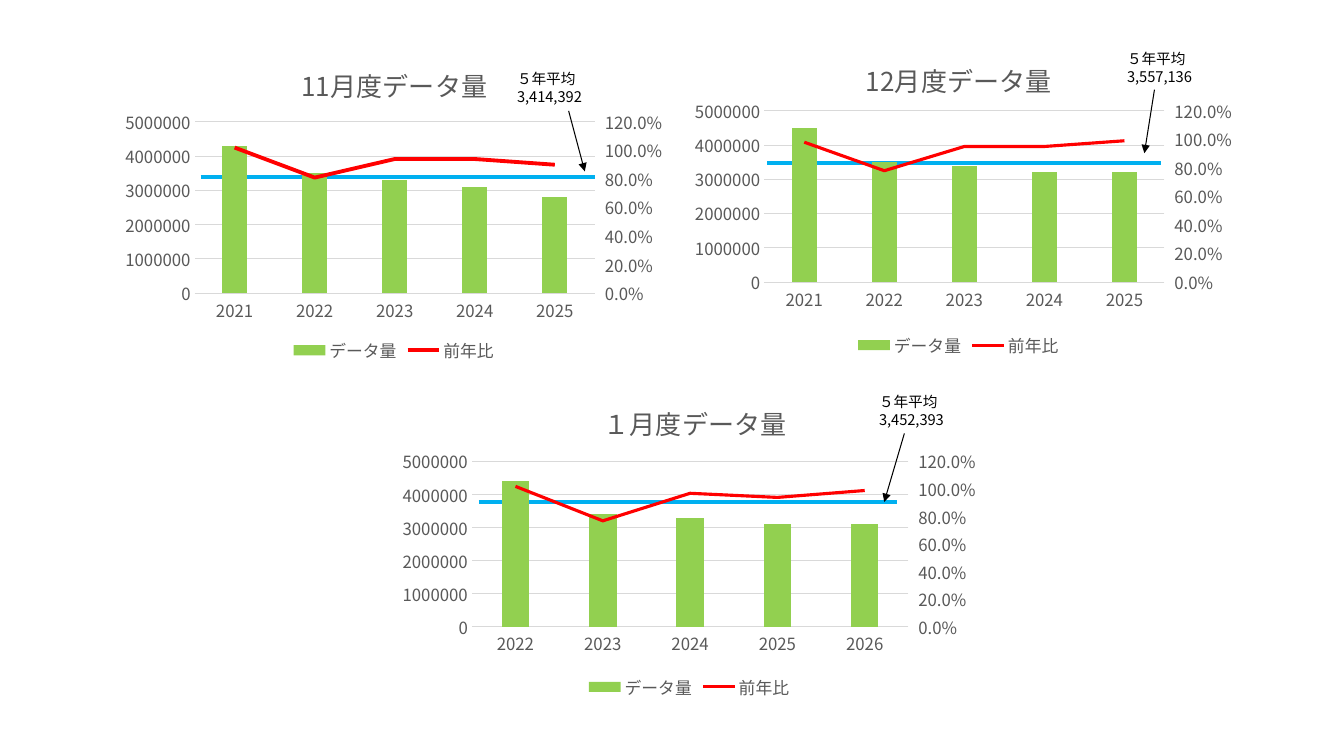
from copy import deepcopy

from pptx import Presentation
from pptx.chart.axis import ValueAxis
from pptx.chart.data import CategoryChartData
from pptx.dml.color import RGBColor
from pptx.enum.chart import (
    XL_CHART_TYPE as ChartType,
    XL_LEGEND_POSITION as LegendPosition,
    XL_MARKER_STYLE as MarkerStyle,
    XL_TICK_MARK as TickMark,
)
from pptx.enum.shapes import MSO_CONNECTOR as ConnectorType
from pptx.enum.text import MSO_AUTO_SIZE as AutoSize
from pptx.oxml import parse_xml
from pptx.oxml.ns import nsdecls, qn
from pptx.util import Emu, Pt

COLOURS = {
    "text": "000000",
    "chart text": "595959",
    "grid": "D9D9D9",
    "volume": "92D050",
    "ratio": "FF0000",
    "average": "00B0F0",
}
FONT = "Noto Sans CJK JP"
EMU_PER_PX = 9144


def px(*lengths):
    return [Emu(length * EMU_PER_PX) for length in lengths]


def colour(name):
    return RGBColor.from_string(COLOURS[name])


def style_font(font, size, colour_name):
    font.size = Pt(size)
    font.bold = False
    font.name = FONT
    font.color.rgb = colour(colour_name)


def add_east_asian_font(root):
    """Give the Japanese characters the same font as the Latin ones."""
    for latin in list(root.iter(qn("a:latin"))):
        latin.addnext(parse_xml(f'<a:ea {nsdecls("a")} typeface="{FONT}"/>'))


def set_layout(parent, index, target, **fractions):
    """Fix the place of a chart part as fractions of the chart area."""
    for old in parent.findall(qn("c:layout")):
        parent.remove(old)
    edges = '<c:xMode val="edge"/><c:yMode val="edge"/>'
    values = "".join(f'<c:{key} val="{value:.4f}"/>' for key, value in fractions.items())
    parent.insert(index, parse_xml(
        f'<c:layout {nsdecls("c")}><c:manualLayout>{target}{edges}{values}'
        "</c:manualLayout></c:layout>"))


class DataSlide:
    def __init__(self, deck):
        self.page = deck.slides.add_slide(deck.slide_layouts[6])

    def line(self, start, end, colour_name, width, arrow=False):
        line = self.page.shapes.add_connector(
            ConnectorType.STRAIGHT, *px(*start), *px(*end))
        line.line.color.rgb = colour(colour_name)
        line.line.width = Pt(width)
        properties = line.element.spPr
        if arrow:
            properties.find(qn("a:ln")).append(
                parse_xml(f'<a:tailEnd {nsdecls("a")} type="triangle"/>'))
        properties.append(parse_xml(f'<a:effectLst {nsdecls("a")}/>'))

    def average_label(self, place, value):
        box = self.page.shapes.add_textbox(*px(*place))
        frame = box.text_frame
        frame.word_wrap = True
        frame.auto_size = AutoSize.SHAPE_TO_FIT_TEXT
        frame.text = f"５年平均\n{value}"
        for para in frame.paragraphs:
            para.line_spacing = Pt(13)
            for span in para.runs:
                style_font(span.font, 10.5, "text")
        add_east_asian_font(box.element)

    def chart(self, place, title, title_at, plot_area, years, volumes, ratios, ratio_width):
        data = CategoryChartData()
        data.categories = years
        data.add_series("データ量", volumes)
        data.add_series("前年比", ratios, number_format="0.0%")
        chart = self.page.shapes.add_chart(
            ChartType.COLUMN_CLUSTERED, *px(*place), data).chart
        style_font(chart.font, 10, "text")
        self.style_axes(chart)
        self.move_ratio_to_right_axis(chart)

        bars, lines = chart.plots
        bars.gap_width = 219
        bars.vary_by_categories = False
        volume = bars.series[0]
        volume.invert_if_negative = False
        volume.format.fill.solid()
        volume.format.fill.fore_color.rgb = colour("volume")
        ratio = lines.series[0]
        ratio.format.line.color.rgb = colour("ratio")
        ratio.format.line.width = Pt(ratio_width)
        ratio.marker.style = MarkerStyle.NONE
        ratio.smooth = False

        chart.has_legend = True
        chart.legend.position = LegendPosition.BOTTOM
        chart.legend.include_in_layout = False
        style_font(chart.legend.font, 12, "chart text")
        chart.has_title = True
        chart.chart_title.text_frame.text = title
        style_font(chart.chart_title.text_frame.paragraphs[0].runs[0].font, 18.6, "chart text")

        width, height = place[2:]
        root = chart.element
        set_layout(root.find(f".//{qn('c:title')}"), 1, "",
                   x=title_at[0] / width, y=title_at[1] / height)
        plot = root.find(f".//{qn('c:plotArea')}")
        left, top, plot_width, plot_height = plot_area
        set_layout(plot, 0, '<c:layoutTarget val="inner"/>',
                   x=left / width, y=top / height,
                   w=plot_width / width, h=plot_height / height)
        clear = parse_xml(f'<c:spPr {nsdecls("c", "a")}><a:noFill/>'
                          "<a:ln><a:noFill/></a:ln></c:spPr>")
        plot.append(clear)
        root.find(qn("c:chart")).addnext(deepcopy(clear))
        add_east_asian_font(root)

    def style_axes(self, chart):
        years, volume = chart.category_axis, chart.value_axis
        for axis in (years, volume):
            axis.major_tick_mark = axis.minor_tick_mark = TickMark.NONE
            style_font(axis.tick_labels.font, 12, "chart text")
        volume.minimum_scale, volume.maximum_scale = 0, 5000000
        volume.major_unit = 1000000
        volume.tick_labels.number_format = "0"
        volume.tick_labels.number_format_is_linked = False
        volume.format.line.fill.background()
        volume.has_major_gridlines = True
        for line in (years.format.line, volume.major_gridlines.format.line):
            line.color.rgb = colour("grid")
            line.width = Pt(0.75)

    def move_ratio_to_right_axis(self, chart):
        """Turn the second series into a line with its own pair of axes."""
        plot = chart.element.find(f".//{qn('c:plotArea')}")
        bars = plot.find(qn("c:barChart"))
        ratio = bars.findall(qn("c:ser"))[1]
        for bar_setting in ratio.findall(qn("c:invertIfNegative")):
            ratio.remove(bar_setting)
        lines = parse_xml(
            f'<c:lineChart {nsdecls("c")}><c:grouping val="standard"/>'
            '<c:varyColors val="0"/><c:marker val="1"/>'
            '<c:axId val="5001"/><c:axId val="5002"/></c:lineChart>')
        lines.insert(2, ratio)
        bars.addnext(lines)

        hidden_years = deepcopy(plot.find(qn("c:catAx")))
        percent = deepcopy(plot.find(qn("c:valAx")))
        for axis, own, other in ((hidden_years, "5001", "5002"), (percent, "5002", "5001")):
            axis.find(qn("c:axId")).set("val", own)
            axis.find(qn("c:crossAx")).set("val", other)
        hidden_years.find(qn("c:delete")).set("val", "1")
        percent.find(qn("c:axPos")).set("val", "r")
        percent.find(qn("c:crosses")).set("val", "max")
        plot.find(qn("c:valAx")).addnext(percent)
        percent.addnext(hidden_years)

        right = ValueAxis(percent)
        right.has_major_gridlines = False
        right.major_tick_mark = TickMark.OUTSIDE
        right.maximum_scale, right.major_unit = 1.2, 0.2
        right.tick_labels.number_format = "0.0%"


def main():
    deck = Presentation()
    deck.slide_width, deck.slide_height = px(1333, 750)
    slide = DataSlide(deck)

    for left, right, y in ((199, 590, 176), (761, 1152, 162), (475, 890, 498)):
        slide.line((left, y), (right, y), "average", 2.75)

    years = ["2021", "2022", "2023", "2024", "2025"]
    slide.chart((107, 41, 567, 323), "11月度データ量", (187, 17), (86, 80, 397, 170), years,
                [4300000, 3500000, 3300000, 3100000, 2800000],
                [1.02, 0.81, 0.94, 0.94, 0.9], 2.75)
    slide.chart((667, 36, 567, 323), "12月度データ量", (187, 17), (91, 74, 397, 170), years,
                [4500000, 3500000, 3400000, 3200000, 3200000],
                [0.98, 0.78, 0.95, 0.95, 0.99], 2.25)
    slide.chart((388, 375, 591, 323), "１月度データ量", (206, 18), (80, 83, 433, 164),
                years[1:] + ["2026"],
                [4400000, 3400000, 3300000, 3100000, 3100000],
                [1.02, 0.77, 0.97, 0.94, 0.99], 2.25)

    for place, value, start, end in (
        ((503, 64, 104, 45), "3,414,392", (564, 110), (580, 170)),
        ((1108, 44, 92, 45), "3,557,136", (1145, 89), (1135, 152)),
        ((862, 384, 94, 45), "3,452,393", (897, 430), (877, 498)),
    ):
        slide.average_label(place, value)
        slide.line(start, end, "text", 0.75, arrow=True)

    deck.save("out.pptx")


if __name__ == "__main__":
    main()
